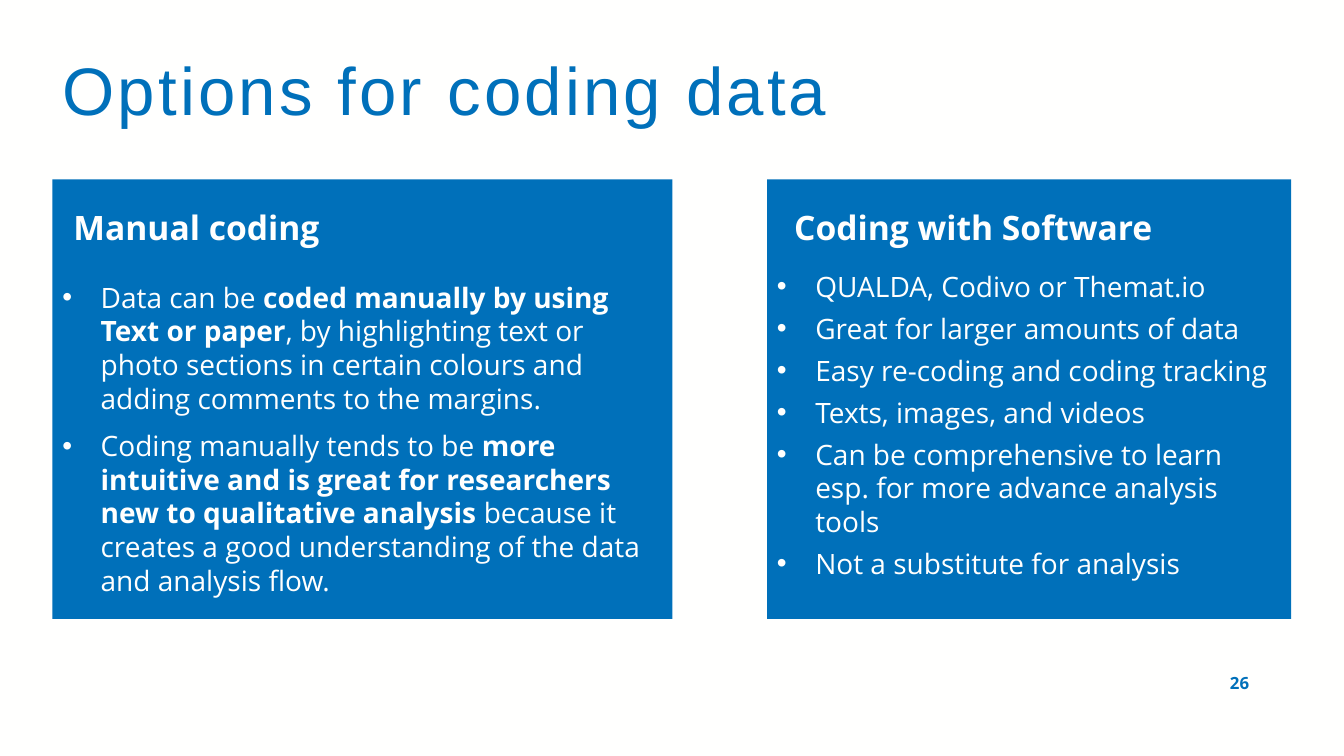
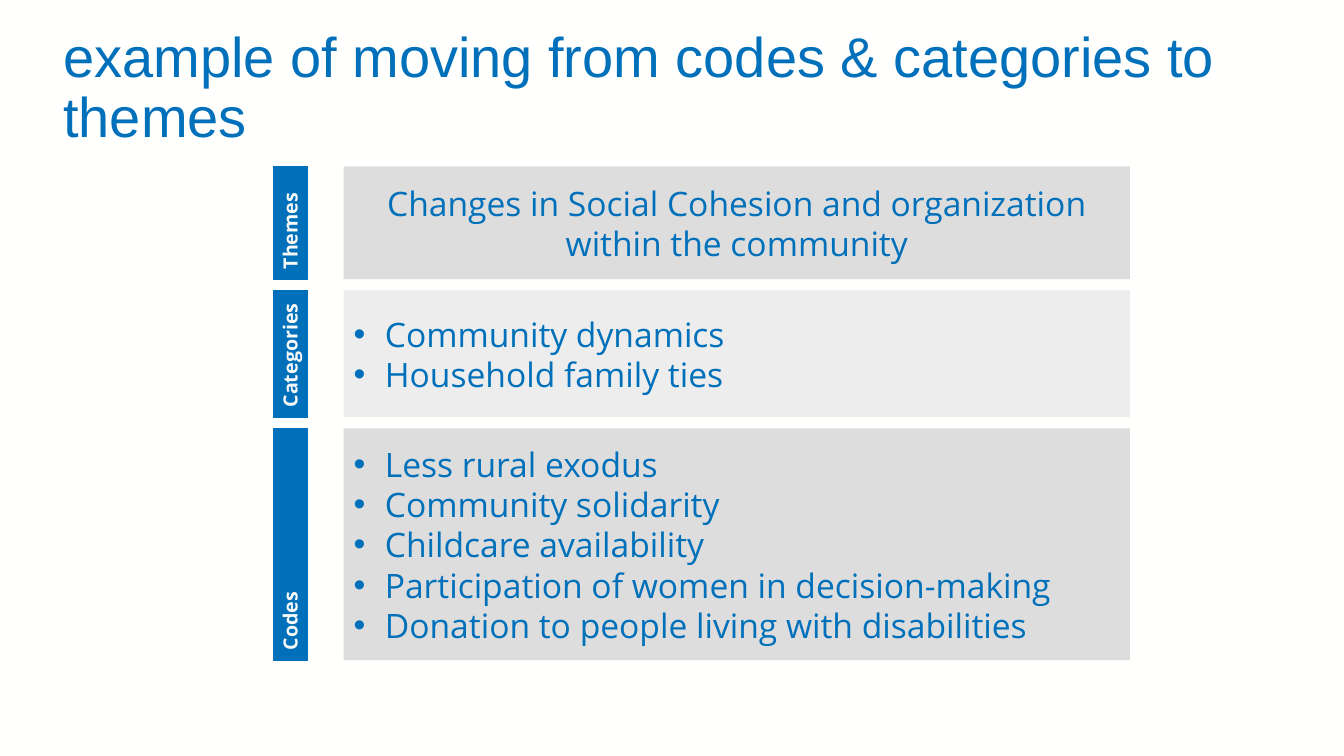
from typing import NamedTuple

from lxml.etree import SubElement
from pptx import Presentation
from pptx.dml.color import RGBColor
from pptx.enum.shapes import MSO_SHAPE as Shape
from pptx.enum.text import MSO_ANCHOR as Anchor, PP_ALIGN as Align
from pptx.oxml.ns import qn
from pptx.util import Inches, Pt

CELL = 0.1
COLUMNS, ROWS = 133.33, 75
COLORS = {
    "page": "FFFFFE",
    "blue": "0070BA",
    "grey": "DDDDDD",
    "label": "F8F8F8",
}
TITLE_FONT, BODY_FONT = "Arial", "Open Sans"


class Box(NamedTuple):
    """An area of the slide, in grid columns and rows."""
    left: float
    top: float
    width: float
    height: float


def cells(count):
    """Turn grid cells into a length."""
    return Inches(count * CELL)


def color(name):
    """Look up a colour by name."""
    return RGBColor.from_string(COLORS[name])


def add_box(page, box, fill=None, anchor=Anchor.TOP):
    """Add a wrapping text box, or a rectangle when a fill is named."""
    place = [cells(length) for length in box]
    if fill:
        shape = page.shapes.add_shape(Shape.RECTANGLE, *place)
        shape.shadow.inherit = False
        shape.fill.solid()
        shape.fill.fore_color.rgb = color(fill)
        shape.line.fill.background()
    else:
        shape = page.shapes.add_textbox(*place)
    shape.text_frame.word_wrap = True
    shape.text_frame.vertical_anchor = anchor
    return shape


def add_bullet(para, ink, indent):
    """Give a paragraph a hanging bullet."""
    props = para._p.get_or_add_pPr()
    props.set("marL", str(cells(indent)))
    props.set("indent", str(-cells(indent)))
    tint = SubElement(props, qn("a:buClr"))
    SubElement(tint, qn("a:srgbClr"), val=COLORS[ink])
    SubElement(props, qn("a:buFont"), typeface="Arial")
    SubElement(props, qn("a:buChar"), char="•")


def write(shape, lines, size, ink, font=BODY_FONT, bold=False, align=Align.LEFT, indent=0):
    """Write one paragraph a line; text between double stars is bold."""
    frame = shape.text_frame
    for index, line in enumerate(lines):
        para = frame.paragraphs[0] if index == 0 else frame.add_paragraph()
        if indent:
            add_bullet(para, ink, indent)
        para.alignment = align
        para.font.name, para.font.size, para.font.bold = font, Pt(size), bold
        para.font.color.rgb = color(ink)
        for part, text in enumerate(line.split("**")):
            span = para.add_run()
            span.text = text
            if part % 2:
                span.font.bold = True
    return frame.paragraphs


def add_page(deck, title, box, size, tracking=0):
    """Add a slide with its background and title."""
    page = deck.slides.add_slide(deck.slide_layouts[6])
    page.background.fill.solid()
    page.background.fill.fore_color.rgb = color("page")
    shape = add_box(page, box, anchor=Anchor.MIDDLE)
    para = write(shape, [title], size, "blue", TITLE_FONT)[0]
    para.line_spacing = 0.9
    if tracking:
        para.runs[0]._r.get_or_add_rPr().set("spc", str(round(tracking * 100)))
    return page


def add_option(page, box, heading, lines, heading_inset, body_inset, before=0, after=0):
    """Add a blue panel with a heading and bullets."""
    panel = add_box(page, box, "blue")
    panel.text_frame.margin_top = cells(body_inset)
    for index, para in enumerate(write(panel, lines, 20, "page", indent=3.8)):
        para.space_before = Pt(before if index else 0)
        para.space_after = Pt(after)
    title = add_box(page, Box(box.left + heading_inset, box.top + 2.2, 41.5, 5))
    write(title, [heading], 24, "page", bold=True)


def add_level(page, box, name, lines, bulleted=True, opacity=100):
    """Add a grey band and the upright label on its left."""
    band = add_box(page, box, "grey", Anchor.MIDDLE)
    if opacity < 100:
        tint = band._element.spPr.find(".//" + qn("a:srgbClr"))
        SubElement(tint, qn("a:alpha"), val=str(opacity * 1000))
    align = Align.LEFT if bulleted else Align.CENTER
    write(band, lines, 24, "blue", align=align, indent=3.1 if bulleted else 0)

    thickness, center = 3.4, box.left - 5.3
    label = add_box(page, Box(center - box.height / 2, box.top + (box.height - thickness) / 2,
                              box.height, thickness), "blue")
    label.rotation = 270
    label.line.color.rgb = color("blue")
    label.line.width = Pt(0.75)
    write(label, [name], 14, "label", bold=True)


def build_options(deck):
    """Build the slide comparing the two ways of coding."""
    page = add_page(deck, "Options for coding data", Box(5.2, 3, 123, 12.6), 48, 2.3)
    add_option(page, Box(5.2, 17.8, 61.5, 43.6), "Manual coding", [
        "Data can be **coded manually by using Text or paper**, by highlighting text or "
        "photo sections in certain colours and adding comments to the margins.",
        "Coding manually tends to be **more intuitive and is great for researchers new to "
        "qualitative analysis** because it creates a good understanding of the data and "
        "analysis flow.",
    ], heading_inset=1.1, body_inset=10, before=10)
    add_option(page, Box(76.1, 17.8, 52, 43.6), "Coding with Software", [
        "QUALDA, Codivo or Themat.io",
        "Great for larger amounts of data",
        "Easy re-coding and coding tracking",
        "Texts, images, and videos",
        "Can be comprehensive to learn esp. for more advance analysis tools",
        "Not a substitute for analysis",
    ], heading_inset=1.7, body_inset=8.9, after=6)
    number = add_box(page, Box(113.7, 66.2, 11.2, 4))
    write(number, ["26"], 12, "blue", bold=True, align=Align.RIGHT)


def build_levels(deck):
    """Build the slide stacking themes, categories and codes."""
    page = add_page(deck, "example of moving from codes & categories to themes",
                    Box(5.3, 4.3, 123, 9.1), 40)
    levels = [
        (11.2, "Themes", ["Changes in Social Cohesion and organization within the community"],
         False, 100),
        (12.6, "Categories", ["Community dynamics", "Household family ties"], True, 50),
        (23, "Codes", ["Less rural exodus", "Community solidarity", "Childcare availability",
                       "Participation of women in decision-making",
                       "Donation to people living with disabilities"], True, 100),
    ]
    top, gap = 16.5, 1.1
    for height, name, lines, bulleted, opacity in levels:
        add_level(page, Box(34.1, top, 78, height), name, lines, bulleted, opacity)
        top += height + gap


def main():
    """Build and save the deck."""
    deck = Presentation()
    deck.slide_width, deck.slide_height = cells(COLUMNS), cells(ROWS)
    build_options(deck)
    build_levels(deck)
    deck.save("out.pptx")


if __name__ == "__main__":
    main()
